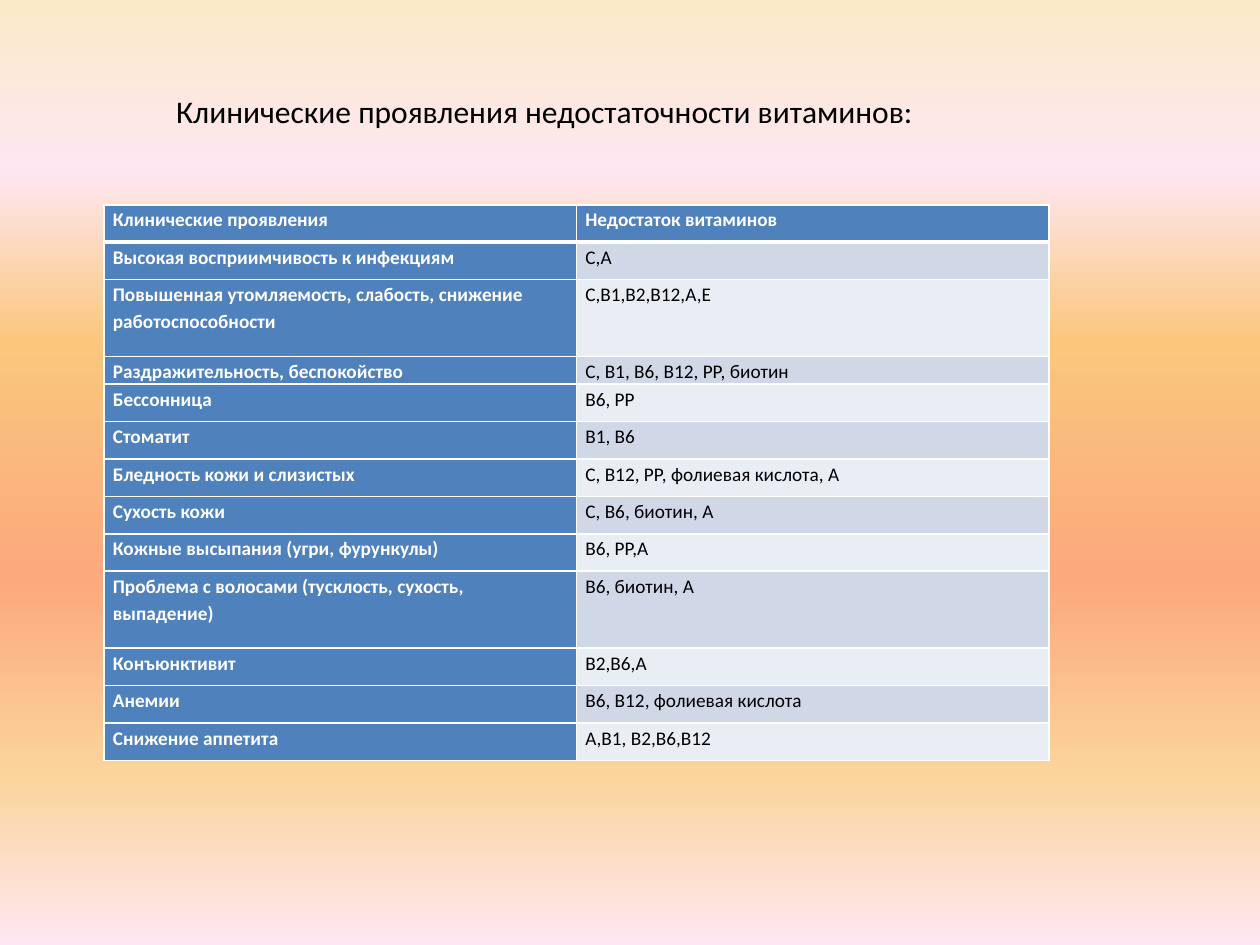
"""Builds a slide with a table of vitamin deficiency symptoms."""
from lxml.etree import SubElement
from pptx import Presentation
from pptx.dml.color import RGBColor as RGB
from pptx.enum.text import MSO_AUTO_SIZE as AutoSize
from pptx.oxml.ns import qn
from pptx.util import Pt

WHITE = RGB(0xFF, 0xFF, 0xFF)
BLACK = RGB(0, 0, 0)
BLUE = RGB(0x4F, 0x81, 0xBD)
BANDS = (RGB(0xE9, 0xED, 0xF4), RGB(0xD0, 0xD8, 0xE8))
PINK = RGB(0xFE, 0xE7, 0xF2)
GRADIENT = [
    (0, RGB(0xFB, 0xEA, 0xC7)),
    (18, PINK),
    (36, RGB(0xFA, 0xC7, 0x7D)),
    (61, RGB(0xFB, 0xA9, 0x7D)),
    (82, RGB(0xFB, 0xD4, 0x9C)),
    (100, PINK),
]

NORMAL, TALL, SHORT = 21.4, 44, 15.8
ROWS = [
    ("Клинические проявления", "Недостаток витаминов", NORMAL),
    ("Высокая восприимчивость к инфекциям", "C,A", NORMAL),
    ("Повышенная утомляемость, слабость, снижение работоспособности", "C,B1,B2,B12,A,E", TALL),
    ("Раздражительность, беспокойство", "С, В1, В6, В12, РР, биотин", SHORT),
    ("Бессонница", "B6, PP", NORMAL),
    ("Стоматит", "B1, B6", NORMAL),
    ("Бледность кожи и слизистых", "С, В12, РР, фолиевая кислота, А", NORMAL),
    ("Сухость кожи", "С, В6, биотин, А", NORMAL),
    ("Кожные высыпания (угри, фурункулы)", "B6, PP,A", NORMAL),
    ("Проблема с волосами (тусклость, сухость, выпадение)", "В6, биотин, А", TALL),
    ("Конъюнктивит", "B2,B6,A", NORMAL),
    ("Анемии", "В6, В12, фолиевая кислота", NORMAL),
    ("Снижение аппетита", "A,B1, B2,B6,B12", NORMAL),
]


class Deck:
    def __init__(self, prs, font="Calibri"):
        self.font = font
        self.s = prs.slides.add_slide(prs.slide_layouts[6])

    def background(self, stops):
        fill = self.s.background.fill
        fill.gradient()
        fill.gradient_angle = 270
        stop_list = next(self.s._element.iter(qn("a:gsLst")))
        for old in list(stop_list):
            stop_list.remove(old)
        for pos, color in stops:
            stop = SubElement(stop_list, qn("a:gs"), pos=str(pos * 1000))
            SubElement(stop, qn("a:srgbClr"), val=str(color))

    def text(self, tf, text, size, color, bold=False):
        p = tf.paragraphs[0]
        p.text = text
        p.font.name, p.font.size = self.font, Pt(size)
        p.font.color.rgb, p.font.bold = color, bold
        return p

    def title(self, text, x, y, w, h):
        tf = self.s.shapes.add_textbox(Pt(x), Pt(y), Pt(w), Pt(h)).text_frame
        tf.word_wrap = True
        tf.auto_size = AutoSize.SHAPE_TO_FIT_TEXT
        self.text(tf, text, 18, BLACK)

    def borders(self, cell, **widths):
        props = cell._tc.get_or_add_tcPr()
        for side in "LRTB":
            width = Pt(widths.get(side, 1))
            line = SubElement(props, qn(f"a:ln{side}"), w=str(width))
            SubElement(SubElement(line, qn("a:solidFill")), qn("a:srgbClr"), val=str(WHITE))

    def cell(self, cell, text, row, col):
        header = row == 0 or col == 0
        self.borders(cell, T=3 if row == 1 else 1, B=3 if row == 0 else 1)
        cell.fill.solid()
        cell.fill.fore_color.rgb = BLUE if header else BANDS[row % 2]
        cell.margin_left = cell.margin_right = Pt(5)
        cell.margin_top = cell.margin_bottom = 0
        p = self.text(cell.text_frame, text, 11, WHITE if header else BLACK, header)
        p.line_spacing = 1.15

    def table(self, rows, x, y, w):
        height = sum(h for *_, h in rows)
        table = self.s.shapes.add_table(len(rows), 2, Pt(x), Pt(y), Pt(w), Pt(height)).table
        for i, (*texts, h) in enumerate(rows):
            table.rows[i].height = Pt(h)
            for j, text in enumerate(texts):
                self.cell(table.cell(i, j), text, i, j)


def main():
    prs = Presentation()
    prs.slide_width, prs.slide_height = Pt(720), Pt(540)
    deck = Deck(prs)
    deck.background(GRADIENT)
    deck.table(ROWS, 59.5, 117, 540)
    deck.title("Клинические проявления недостаточности витаминов:", 93.6, 49, 487.5, 29)
    prs.save("out.pptx")


if __name__ == "__main__":
    main()
